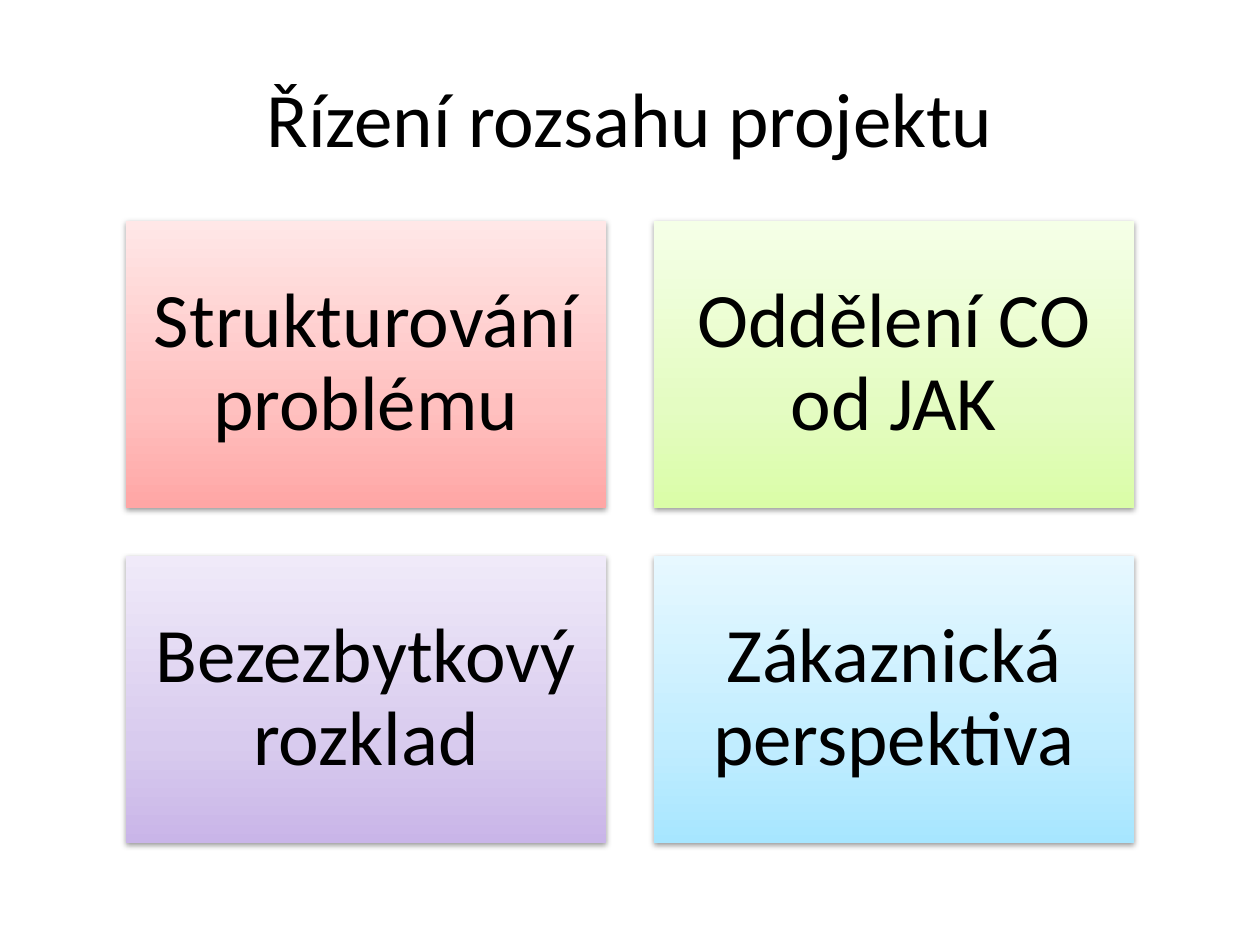
from copy import deepcopy

from lxml import etree
from pptx import Presentation
from pptx.dml.color import RGBColor
from pptx.enum.shapes import MSO_SHAPE
from pptx.enum.text import MSO_ANCHOR, PP_ALIGN
from pptx.oxml.ns import qn
from pptx.util import Inches, Pt

RECTANGLE = MSO_SHAPE.RECTANGLE
MIDDLE = MSO_ANCHOR.MIDDLE
CENTER = PP_ALIGN.CENTER

FONT = "Calibri"
TEXT_SIZE = 44
BLACK = "000000"
STOP_POSITIONS = (0, 0.35, 1)

CARD_LEFT, CARD_TOP = 1, 1.75
CARD_WIDTH, CARD_HEIGHT = 3.81, 2.28
CARD_GAP = 0.38
CARD_INSET = 0.18
COLUMNS = 2
CARDS = (
    ("Strukturování problému", ("FFA6A5", "FFC0BF", "FFE7E7")),
    ("Oddělení CO od JAK", ("DAFDA7", "E4FCC2", "F5FFE7")),
    ("Bezezbytkový rozklad", ("C9B5E8", "D8CBEE", "F0EAF9")),
    ("Zákaznická perspektiva", ("A7E6FF", "C1EDFF", "E7F8FF")),
)


def color(value):
    """Return the colour for a hex string."""
    return RGBColor.from_string(value)


def write_text(text_frame, text):
    """Write one centred paragraph in the slide's text style."""
    text_frame.word_wrap = True
    text_frame.vertical_anchor = MIDDLE
    paragraph = text_frame.paragraphs[0]
    paragraph.alignment = CENTER
    run = paragraph.add_run()
    run.text = text
    run.font.name = FONT
    run.font.size = Pt(TEXT_SIZE)
    run.font.color.rgb = color(BLACK)
    return paragraph


def set_gradient(shape, stop_colors):
    """Fill a shape with a three-stop gradient running upwards."""
    shape.fill.gradient()
    shape.fill.gradient_angle = 90
    stop_list = shape._element.spPr.find(".//" + qn("a:gsLst"))
    stop_list.append(deepcopy(stop_list[0]))
    stops = zip(shape.fill.gradient_stops, STOP_POSITIONS, stop_colors)
    for stop, position, stop_color in stops:
        stop.position = position
        stop.color.rgb = color(stop_color)


def set_shadow(shape):
    """Give a shape a soft shadow just below it."""
    shape.shadow.inherit = False
    effects = shape._element.spPr.find(qn("a:effectLst"))
    shadow = etree.SubElement(
        effects, qn("a:outerShdw"), blurRad=str(Pt(3.1)), dist=str(Pt(1.6)),
        dir="5400000", rotWithShape="0",
    )
    shadow_color = etree.SubElement(shadow, qn("a:srgbClr"), val=BLACK)
    etree.SubElement(shadow_color, qn("a:alpha"), val="38000")


def add_title(slide, text):
    """Place and fill the title placeholder."""
    title = slide.shapes.title
    title.left, title.top = Inches(0.5), Inches(0.3)
    title.width, title.height = Inches(9), Inches(1.25)
    write_text(title.text_frame, text)


def add_card(slide, index, text, stop_colors):
    """Add one card at its place in the grid."""
    row, column = divmod(index, COLUMNS)
    card = slide.shapes.add_shape(
        RECTANGLE,
        Inches(CARD_LEFT + column * (CARD_WIDTH + CARD_GAP)),
        Inches(CARD_TOP + row * (CARD_HEIGHT + CARD_GAP)),
        Inches(CARD_WIDTH),
        Inches(CARD_HEIGHT),
    )
    set_gradient(card, stop_colors)
    card.line.fill.background()
    set_shadow(card)
    frame = card.text_frame
    frame.margin_left = frame.margin_right = Inches(CARD_INSET)
    frame.margin_top = frame.margin_bottom = Inches(CARD_INSET)
    write_text(frame, text).line_spacing = 0.9


def main():
    """Build the slide and save it."""
    presentation = Presentation()
    presentation.slide_width = Inches(10)
    presentation.slide_height = Inches(7.5)
    slide = presentation.slides.add_slide(presentation.slide_layouts[5])
    add_title(slide, "Řízení rozsahu projektu")
    for index, (text, stop_colors) in enumerate(CARDS):
        add_card(slide, index, text, stop_colors)
    presentation.save("out.pptx")


if __name__ == "__main__":
    main()
